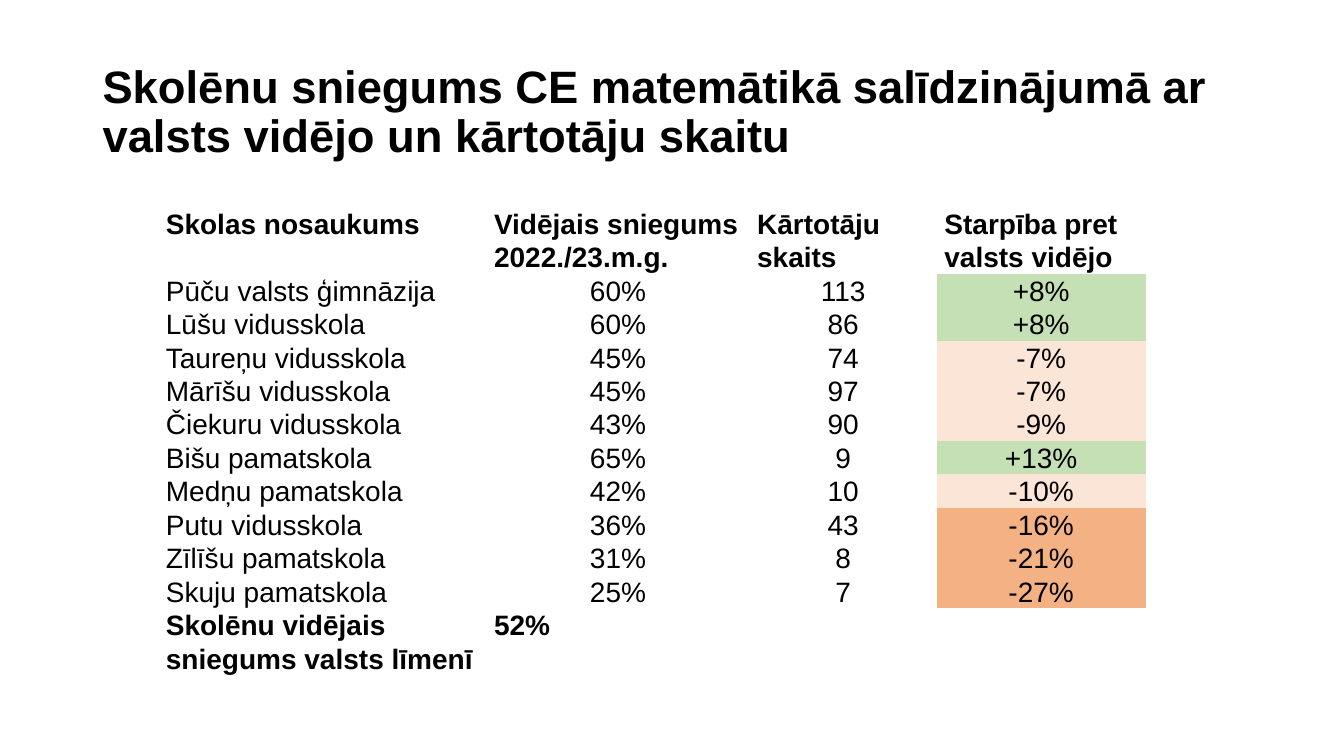
from pptx import Presentation
from pptx.dml.color import RGBColor
from pptx.enum import text
from pptx.util import Cm, Pt

BLACK = RGBColor(0x00, 0x00, 0x00)
GREEN = RGBColor(0xC5, 0xE0, 0xB4)
PEACH = RGBColor(0xFB, 0xE5, 0xD6)
ORANGE = RGBColor(0xF4, 0xB1, 0x83)

TITLE = "Skolēnu sniegums CE matemātikā salīdzinājumā ar valsts vidējo un kārtotāju skaitu"
HEADINGS = ("Skolas nosaukums", "Vidējais sniegums 2022./23.m.g.",
            "Kārtotāju skaits", "Starpība pret valsts vidējo")
SCHOOLS = [
    ("Pūču valsts ģimnāzija", 60, 113),
    ("Lūšu vidusskola", 60, 86),
    ("Taureņu vidusskola", 45, 74),
    ("Mārīšu vidusskola", 45, 97),
    ("Čiekuru vidusskola", 43, 90),
    ("Bišu pamatskola", 65, 9),
    ("Medņu pamatskola", 42, 10),
    ("Putu vidusskola", 36, 43),
    ("Zīlīšu pamatskola", 31, 8),
    ("Skuju pamatskola", 25, 7),
]
AVERAGE_LABEL = "Skolēnu vidējais sniegums valsts līmenī"
AVERAGE = 52
LARGE_GAP = -10

COLUMN_WIDTHS = (8.27, 6.63, 4.72, 5.26)
ROW_HEIGHT = 0.84
NO_STYLE = "{2D5ABB26-0587-4C30-8999-92F81FD0307C}"
LEFT, CENTER = text.PP_ALIGN.LEFT, text.PP_ALIGN.CENTER


def apply(target, values):
    for name, value in values.items():
        setattr(target, name, value)


def write(frame, content, size, bold, align, spacing):
    frame.text = content
    para = frame.paragraphs[0]
    apply(para, {"alignment": align, "line_spacing": spacing})
    span = para.runs[0]
    apply(span.font, {"name": "Arial", "size": Pt(size), "bold": bold})
    span.font.color.rgb = BLACK


def gap_color(gap):
    if gap >= 0:
        return GREEN
    return PEACH if gap >= LARGE_GAP else ORANGE


def add_title(page):
    box = page.shapes.title
    apply(box, {"left": Cm(2.33), "top": Cm(1.01), "width": Cm(29.21), "height": Cm(3.68)})
    apply(box.text_frame, {"word_wrap": True, "auto_size": text.MSO_AUTO_SIZE.NONE,
                           "vertical_anchor": text.MSO_ANCHOR.MIDDLE})
    write(box.text_frame, TITLE, 32.4, True, LEFT, 0.9)


def add_results(page):
    rows = [HEADINGS]
    rows += [(name, f"{score}%", str(count), f"{score - AVERAGE:+d}%")
             for name, score, count in SCHOOLS]
    rows.append((AVERAGE_LABEL, f"{AVERAGE}%", "", ""))
    heights = [2 * ROW_HEIGHT] + [ROW_HEIGHT] * len(SCHOOLS) + [2 * ROW_HEIGHT]

    holder = page.shapes.add_table(len(rows), len(HEADINGS), Cm(3.99), Cm(5.21),
                                   Cm(sum(COLUMN_WIDTHS)), Cm(sum(heights)))
    holder.element.xpath(".//a:tableStyleId")[0].text = NO_STYLE
    table = holder.table
    apply(table, {"first_row": False, "horz_banding": False})
    for column, width in zip(table.columns, COLUMN_WIDTHS):
        column.width = Cm(width)
    for row, height in zip(table.rows, heights):
        row.height = Cm(height)

    for r, values in enumerate(rows):
        strong = r in (0, len(rows) - 1)
        for c, value in enumerate(values):
            cell = table.cell(r, c)
            apply(cell, {"margin_left": Cm(0.19), "margin_right": Cm(0.19),
                         "margin_top": 0, "margin_bottom": 0})
            cell.fill.background()
            if value:
                align = LEFT if strong or c == 0 else CENTER
                write(cell.text_frame, value, 20, strong, align, 1.07)

    for r, (name, score, count) in enumerate(SCHOOLS, start=1):
        fill = table.cell(r, len(HEADINGS) - 1).fill
        fill.solid()
        fill.fore_color.rgb = gap_color(score - AVERAGE)


def main():
    deck = Presentation()
    apply(deck, {"slide_width": Cm(33.87), "slide_height": Cm(19.05)})
    page = deck.slides.add_slide(deck.slide_layouts[5])
    add_title(page)
    add_results(page)
    deck.save("out.pptx")


if __name__ == "__main__":
    main()
